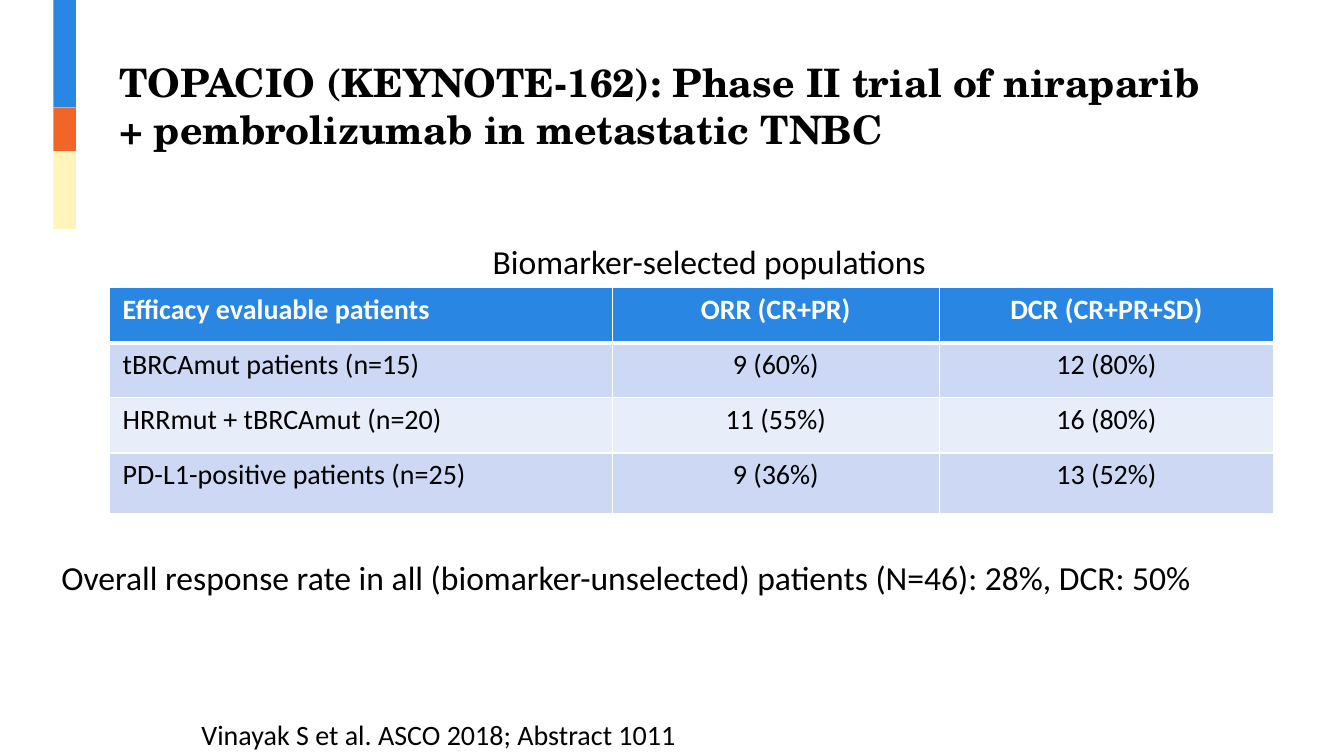
import pptx
import pptx.util
import pptx.dml.color
import pptx.enum.shapes
import pptx.enum.text
import pptx.oxml

Pt = pptx.util.Pt
ALIGN = pptx.enum.text.PP_ALIGN
ANCHOR = pptx.enum.text.MSO_ANCHOR
SIZE = pptx.enum.text.MSO_AUTO_SIZE
NS = "http://schemas.openxmlformats.org/drawingml/2006/main"
HUES = {"blue": "2986E2", "orange": "F26529", "cream": "FFF5BC", "black": "000000",
        "white": "FFFFFF", "dark": "CDD9F4", "light": "E8EDFA"}


class Deck:
    """Holds the style and the current slide, and draws each kind of element."""

    def __init__(self, wide, high):
        self.file = pptx.Presentation()
        self.file.slide_width, self.file.slide_height = Pt(wide), Pt(high)
        self.slide = self.file.slides.add_slide(self.file.slide_layouts[5])
        self.body, self.head = "Calibri", "TeX Gyre Schola"

    def hue(self, name):
        return pptx.dml.color.RGBColor.from_string(HUES[name])

    def style(self, frame, size, font, hue="black", bold=False, align=ALIGN.LEFT):
        for para in frame.paragraphs:
            para.alignment = align
            para.line_spacing = 1.0
            para.space_before = Pt(0)
            for run in para.runs:
                run.font.size, run.font.name, run.font.bold = Pt(size), font, bold
                run.font.color.rgb = self.hue(hue)

    def title(self, text, left, top, wide, high):
        box = self.slide.shapes.title
        box.left, box.top, box.width, box.height = Pt(left), Pt(top), Pt(wide), Pt(high)
        frame = box.text_frame
        frame.text = text
        frame.word_wrap, frame.auto_size = True, SIZE.NONE
        frame.vertical_anchor = ANCHOR.BOTTOM
        self.style(frame, 28, self.head, bold=True)

    def bar(self, hue, left, top, wide, high):
        box = self.slide.shapes.add_shape(
            pptx.enum.shapes.MSO_SHAPE.RECTANGLE, Pt(left), Pt(top), Pt(wide), Pt(high))
        box.shadow.inherit = False
        box.fill.solid()
        box.fill.fore_color.rgb = self.hue(hue)
        box.line.fill.background()

    def text(self, text, left, top, wide, high, size=24, grow=True):
        frame = self.slide.shapes.add_textbox(
            Pt(left), Pt(top), Pt(wide), Pt(high)).text_frame
        frame.text = text
        frame.word_wrap = not grow
        frame.auto_size = SIZE.SHAPE_TO_FIT_TEXT if grow else SIZE.NONE
        frame.vertical_anchor = ANCHOR.TOP if grow else ANCHOR.BOTTOM
        self.style(frame, size, self.body)

    def edge(self, cell, side, width):
        cell._tc.get_or_add_tcPr().append(pptx.oxml.parse_xml(
            f'<a:ln{side} xmlns:a="{NS}" w="{Pt(width)}"><a:solidFill>'
            f'<a:srgbClr val="{HUES["white"]}"/></a:solidFill></a:ln{side}>'))

    def cell(self, cell, text, row, col):
        top = row == 0
        cell.text = text
        cell.margin_left = cell.margin_right = Pt(9.4)
        cell.margin_top = cell.margin_bottom = Pt(3.6)
        for side in "LRTB":
            thick = (row, side) in ((0, "B"), (1, "T"))
            self.edge(cell, side, 3 if thick else 1)
        cell.fill.solid()
        cell.fill.fore_color.rgb = self.hue("blue" if top else "dark" if row % 2 else "light")
        self.style(cell.text_frame, 20, self.body, "white" if top else "black", top,
                   ALIGN.CENTER if col else ALIGN.LEFT)

    def table(self, data, left, top, wides, highs):
        grid = self.slide.shapes.add_table(
            len(highs), len(wides), Pt(left), Pt(top), Pt(sum(wides)), Pt(sum(highs))).table
        for part, wide in zip(grid.columns, wides):
            part.width = Pt(wide)
        for part, high in zip(grid.rows, highs):
            part.height = Pt(high)
        for row, line in enumerate(data):
            for col, text in enumerate(line):
                self.cell(grid.cell(row, col), text, row, col)


def main():
    deck = Deck(960, 540)
    top = 0
    for hue, high in (("blue", 76.8), ("orange", 31.2), ("cream", 55.6)):
        deck.bar(hue, 38.2, top, 16, high)
        top += high
    deck.title("TOPACIO (KEYNOTE-162): Phase II trial of niraparib "
               "+ pembrolizumab in metastatic TNBC", 77.8, -5.8, 802.8, 118)
    deck.text("Vinayak S et al. ASCO 2018; Abstract 1011",
              136.8, 489.6, 556.6, 50.4, 20, False)
    deck.table([
        ("Efficacy evaluable patients", "ORR (CR+PR)", "DCR (CR+PR+SD)"),
        ("tBRCAmut patients (n=15)", "9 (60%)", "12 (80%)"),
        ("HRRmut + tBRCAmut (n=20)", "11 (55%)", "16 (80%)"),
        ("PD-L1-positive patients (n=25)", "9 (36%)", "13 (52%)"),
    ], 78.3, 205.4, (359.2, 233.4, 239), (39.4, 39.4, 39.4, 43.2))
    deck.text("Biomarker-selected populations", 344.9, 168.5, 328.3, 36)
    deck.text("Overall response rate in all (biomarker-unselected) patients "
              "(N=46): 28%, DCR: 50%", 36.7, 394.6, 828.7, 36)
    deck.file.save("out.pptx")


if __name__ == "__main__":
    main()
